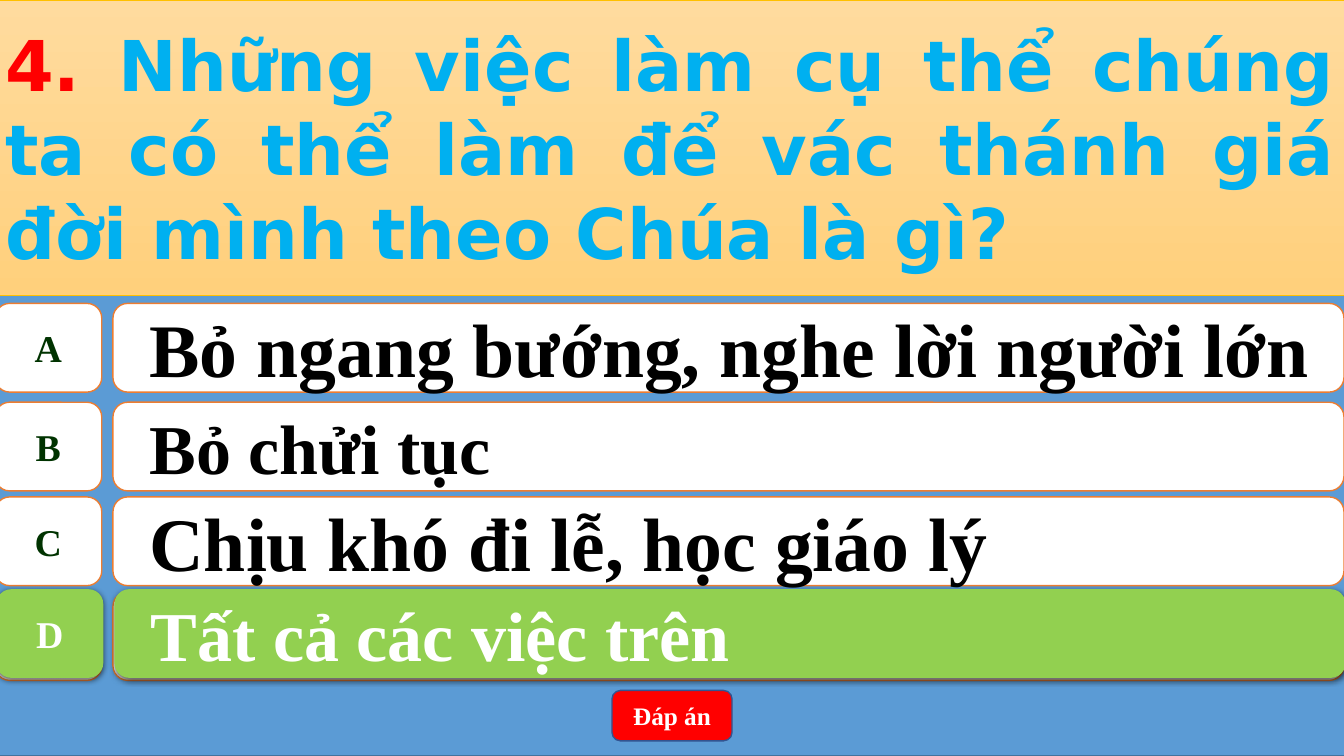
from dataclasses import dataclass

from lxml import etree
from pptx import Presentation
from pptx import util as u
from pptx.dml.color import RGBColor
from pptx.enum import shapes, text
from pptx.oxml import ns
from pptx.shapes.autoshape import Shape
from pptx.shapes.group import GroupShape
from pptx.slide import Slide
from pptx.text.text import _Paragraph as Paragraph


@dataclass(frozen=True)
class Theme:
    serif: str = "Times New Roman"
    sans: str = "DejaVu Sans"
    white: str = "FFFFFF"
    black: str = "000000"
    backdrop: str = "5B9BD5"
    backdrop_line: str = "43739E"
    row_line: str = "ED7D31"
    letter: str = "003300"
    correct: str = "92D050"
    red: str = "FF0000"
    button_line: str = "325491"
    question: str = "00B0F0"
    question_line: str = "FFC000"
    question_top: str = "FFDB9E"
    question_bottom: str = "FFD07C"
    question_size: int = 50
    letter_size: int = 27
    button_size: int = 18


@dataclass(frozen=True)
class Box:
    left: float
    top: float
    width: float
    height: float


@dataclass(frozen=True)
class Answer:
    letter: str
    wording: str
    top: float
    size: int


THEME = Theme()
EDGE = -0.05
FULL_WIDTH = 13.39
ROW_HEIGHT = 0.88
ANSWERS = [
    Answer("A", "Bỏ ngang bướng, nghe lời người lớn", 3.01, 54),
    Answer("B", "Bỏ chửi tục", 3.99, 50),
    Answer("C", "Chịu khó đi lễ, học giáo lý", 4.93, 54),
    Answer("D", "Tất cả các việc trên", 5.87, 50),
]


def rgb(code: str) -> RGBColor:
    return RGBColor.from_string(code)


def add_span(para: Paragraph, wording: str, font: str, size: int, color: str) -> None:
    span = para.add_run()
    span.text = wording
    span.font.name = font
    span.font.size = u.Pt(size)
    span.font.bold = True
    span.font.color.rgb = rgb(color)


def add_panel(parent: Slide | GroupShape, kind: shapes.MSO_SHAPE, box: Box,
              fill: str, line: str | None) -> Shape:
    panel = parent.shapes.add_shape(kind, u.Inches(box.left), u.Inches(box.top),
                                    u.Inches(box.width), u.Inches(box.height))
    panel.shadow.inherit = False
    panel.fill.solid()
    panel.fill.fore_color.rgb = rgb(fill)
    if line is None:
        panel.line.fill.background()
    else:
        panel.line.color.rgb = rgb(line)
        panel.line.width = u.Pt(1)
    panel.text_frame.word_wrap = True
    panel.text_frame.vertical_anchor = text.MSO_ANCHOR.MIDDLE
    return panel


def add_soft_shadow(panel: Shape) -> None:
    effects = panel._element.spPr.find(ns.qn("a:effectLst"))
    shadow = etree.SubElement(effects, ns.qn("a:outerShdw"), blurRad=str(u.Pt(4.5)),
                              dist=str(u.Pt(1.5)), dir="5400000", rotWithShape="0")
    color = etree.SubElement(shadow, ns.qn("a:srgbClr"), val=THEME.black)
    etree.SubElement(color, ns.qn("a:alpha"), val="63000")


def add_answer(page: Slide, answer: Answer, highlighted: bool = False) -> None:
    shift = 0.015 if highlighted else 0
    top = answer.top - 0.025 if highlighted else answer.top
    fill = THEME.correct if highlighted else THEME.white
    line = None if highlighted else THEME.row_line
    letter_color = THEME.white if highlighted else THEME.letter
    answer_color = THEME.white if highlighted else THEME.black
    row = page.shapes.add_group_shape()

    badge = add_panel(row, shapes.MSO_SHAPE.FLOWCHART_ALTERNATE_PROCESS,
                      Box(EDGE + shift, top, 1.06, ROW_HEIGHT), fill, line)
    badge.text_frame.word_wrap = False
    para = badge.text_frame.paragraphs[0]
    para.alignment = text.PP_ALIGN.CENTER
    add_span(para, answer.letter, THEME.serif, THEME.letter_size, letter_color)

    bar = add_panel(row, shapes.MSO_SHAPE.ROUNDED_RECTANGLE,
                    Box(1.12 + shift, top, 12.21, ROW_HEIGHT), fill, line)
    para = bar.text_frame.paragraphs[0]
    para.alignment = text.PP_ALIGN.LEFT
    para.level = 1
    indents = para._p.get_or_add_pPr()
    indents.set("marL", str(u.Inches(0.5)))
    indents.set("indent", str(u.Inches(-0.28)))
    add_span(para, answer.wording, THEME.serif, answer.size, answer_color)

    if highlighted:
        add_soft_shadow(badge)
        add_soft_shadow(bar)


def add_button(page: Slide) -> None:
    button = add_panel(page, shapes.MSO_SHAPE.ROUNDED_RECTANGLE,
                       Box(6.07, 6.85, 1.19, 0.5), THEME.red, THEME.button_line)
    para = button.text_frame.paragraphs[0]
    para.alignment = text.PP_ALIGN.CENTER
    add_span(para, "Đáp án", THEME.serif, THEME.button_size, THEME.white)


def fill_question(page: Slide) -> None:
    title = page.shapes.title
    title.left, title.top = u.Inches(EDGE), u.Inches(0)
    title.width, title.height = u.Inches(FULL_WIDTH), u.Inches(2.93)
    title.fill.gradient()
    title.fill.gradient_angle = 270
    for stop, color in zip(title.fill.gradient_stops,
                           (THEME.question_top, THEME.question_bottom)):
        stop.color.rgb = rgb(color)
    title.line.color.rgb = rgb(THEME.question_line)
    title.line.width = u.Pt(0.5)
    frame = title.text_frame
    frame.word_wrap = True
    frame.auto_size = text.MSO_AUTO_SIZE.NONE
    frame.vertical_anchor = text.MSO_ANCHOR.MIDDLE
    para = frame.paragraphs[0]
    para.alignment = text.PP_ALIGN.JUSTIFY
    add_span(para, "4. ", THEME.sans, THEME.question_size, THEME.red)
    add_span(para, "Những việc làm cụ thể chúng ta có thể làm để vác thánh giá "
             "đời mình theo Chúa là gì?", THEME.sans, THEME.question_size, THEME.question)
    page.shapes._spTree.append(title._element)


def main() -> None:
    deck = Presentation()
    deck.slide_width, deck.slide_height = u.Inches(13.33), u.Inches(7.5)
    page = deck.slides.add_slide(deck.slide_layouts.get_by_name("Title Only"))
    add_panel(page, shapes.MSO_SHAPE.RECTANGLE, Box(EDGE, 0, FULL_WIDTH, 7.5),
              THEME.backdrop, THEME.backdrop_line)
    for answer in ANSWERS:
        add_answer(page, answer)
    add_answer(page, ANSWERS[-1], highlighted=True)
    add_button(page)
    fill_question(page)
    deck.save("out.pptx")


if __name__ == "__main__":
    main()
